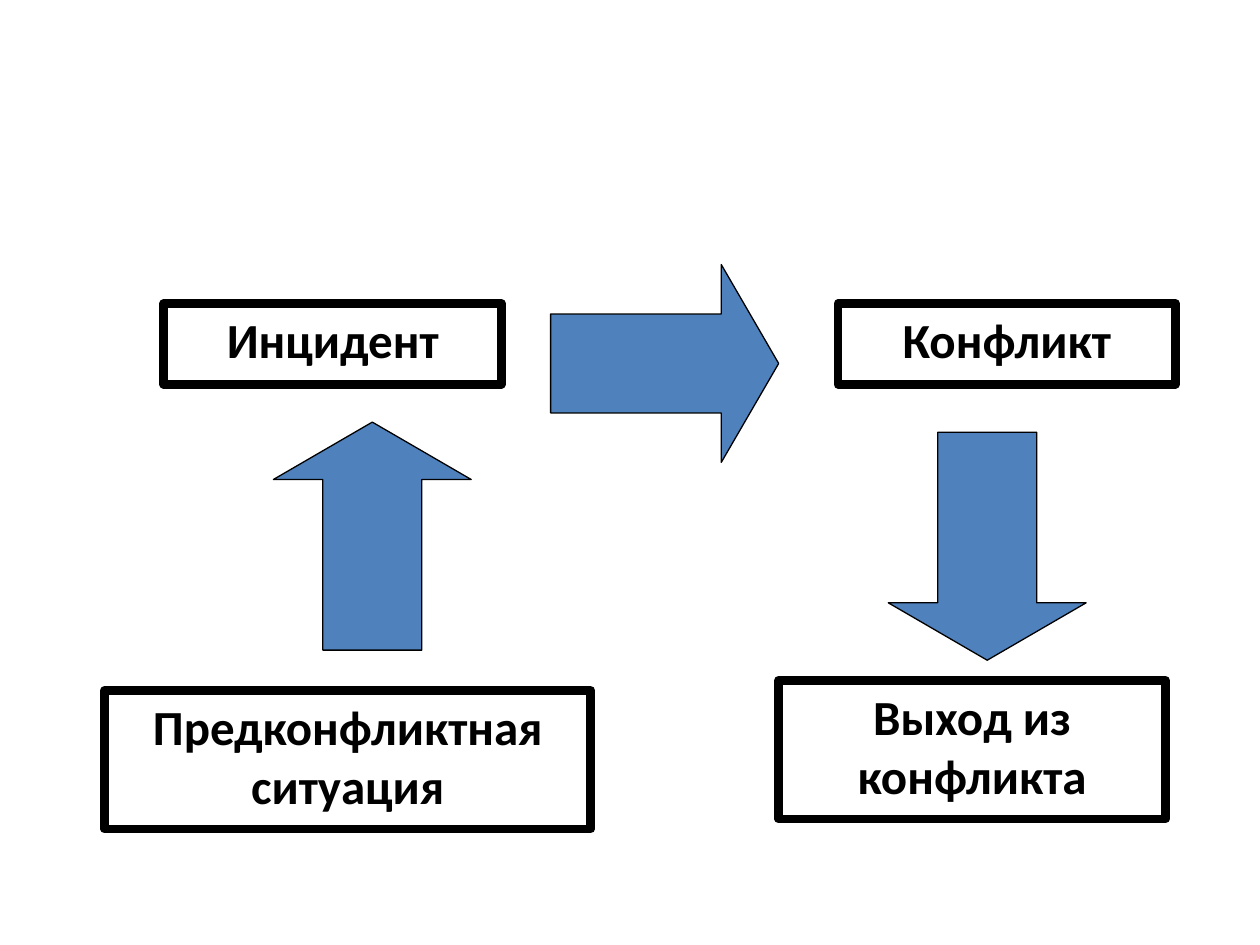
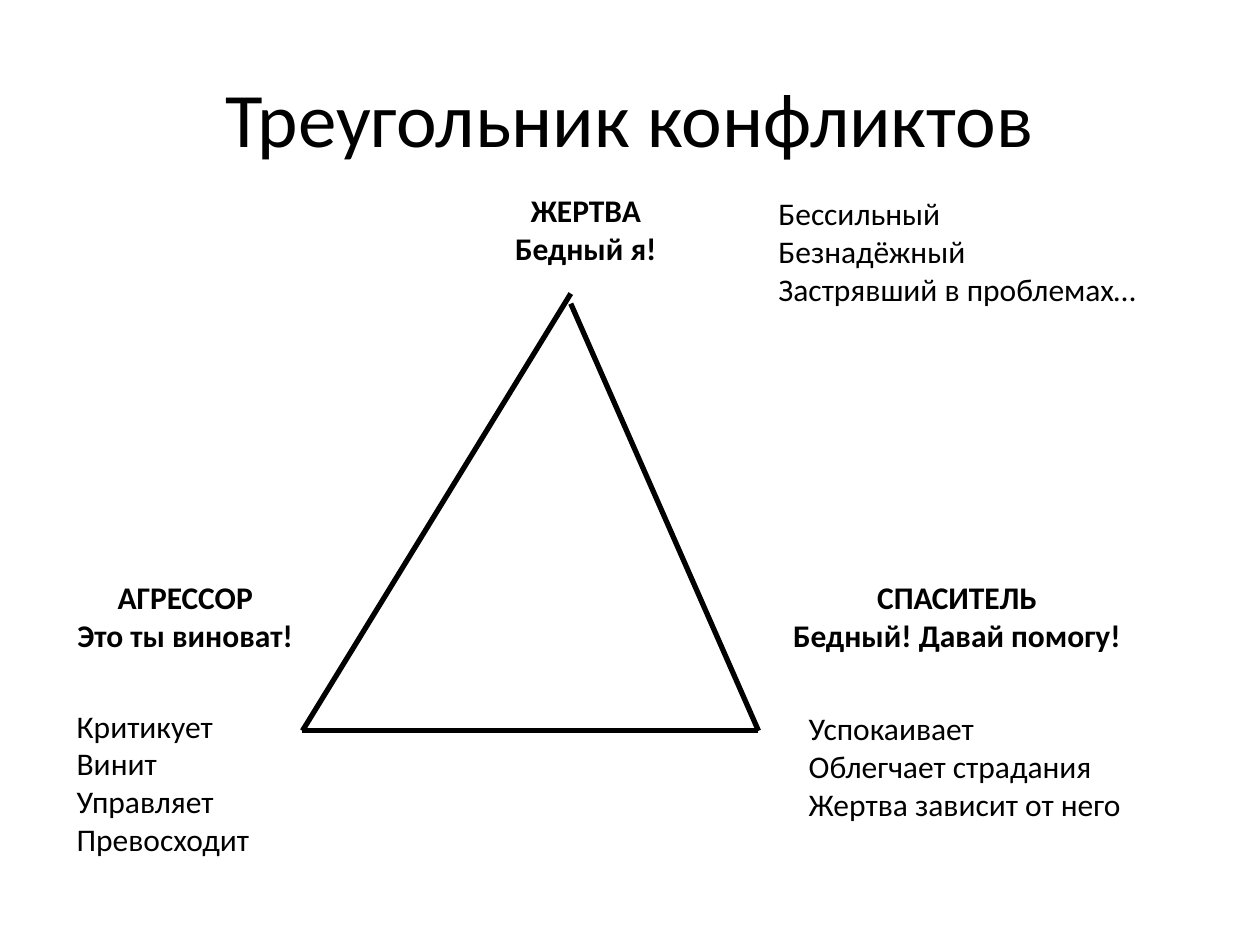
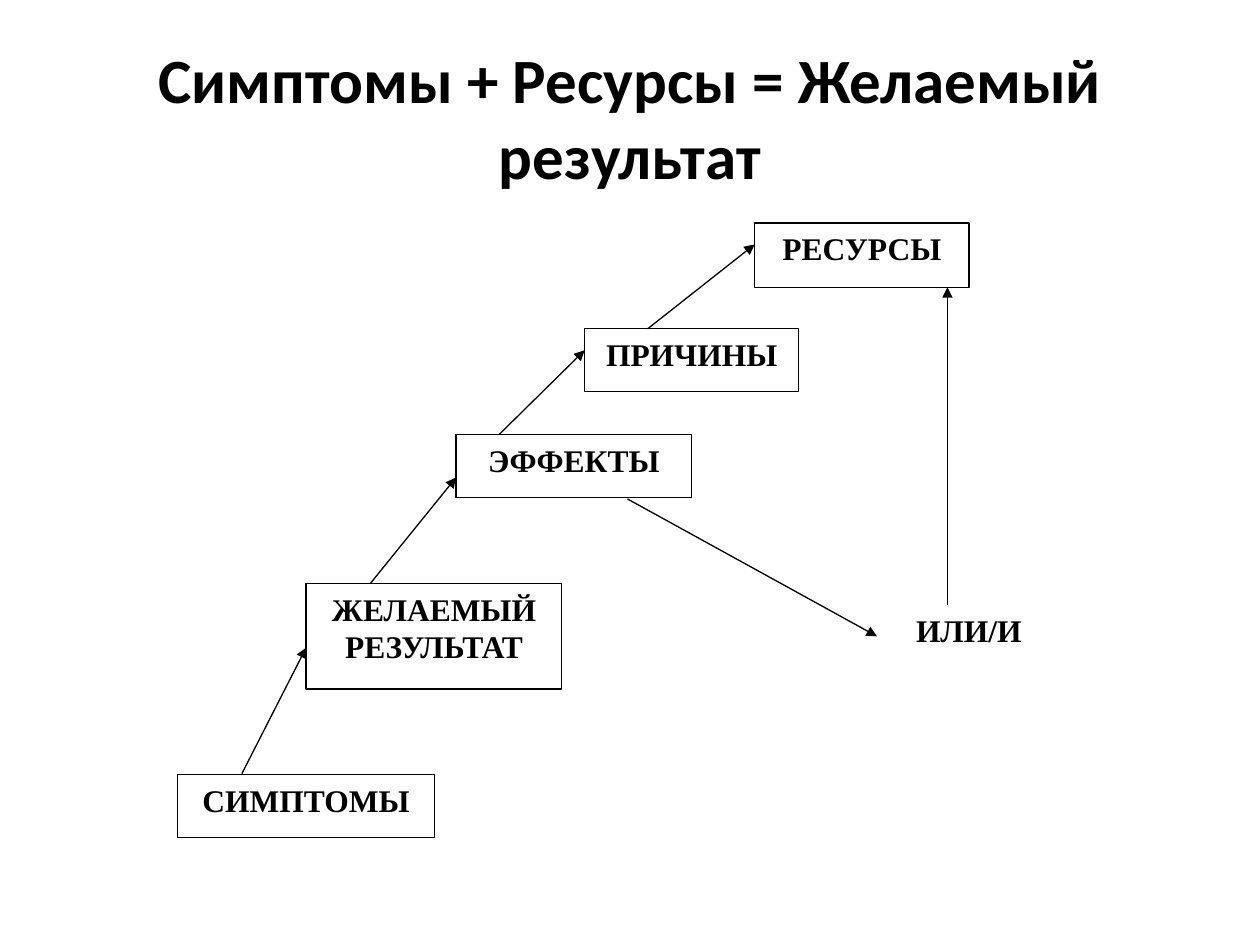
import pptx
import pptx.util
import pptx.dml.color
import pptx.enum.shapes
import pptx.enum.text
import pptx.oxml.ns
from lxml import etree

Inches = pptx.util.Inches
Pt = pptx.util.Pt
SHAPE = pptx.enum.shapes.MSO_SHAPE
ALIGN = pptx.enum.text.PP_ALIGN

BLACK = "000000"
WHITE = "FFFFFF"
BLUE = "4F81BD"
SANS = "Calibri"
SERIF = "Times New Roman"
TITLE_ONLY, BLANK = 5, 6


def rgb(value):
    return pptx.dml.color.RGBColor.from_string(value)


def inches(values):
    return [Inches(v) for v in values]


def style_text(tf, text, size, font=SANS, bold=False, align=ALIGN.CENTER):
    tf.text = text
    for p in tf.paragraphs:
        p.alignment = align
        p.font.size = Pt(size)
        p.font.name = font
        p.font.bold = bold
        p.font.color.rgb = rgb(BLACK)


def add_slide(prs, title=None, size=44, bold=False):
    slide = prs.slides.add_slide(prs.slide_layouts[BLANK if title is None else TITLE_ONLY])
    if title is not None:
        sp = slide.shapes.title
        sp.left, sp.top, sp.width, sp.height = inches((0.5, 0.3, 9, 1.25))
        style_text(sp.text_frame, title, size, bold=bold)
        sp.text_frame.vertical_anchor = pptx.enum.text.MSO_ANCHOR.MIDDLE
    return slide


def add_outlined(slide, kind, box, fill, line_width):
    """Add a preset shape; a fill or line width of None leaves that part out."""
    sp = slide.shapes.add_shape(kind, *inches(box))
    sp.shadow.inherit = False
    if fill is None:
        sp.fill.background()
    else:
        sp.fill.solid()
        sp.fill.fore_color.rgb = rgb(fill)
    if line_width is None:
        sp.line.fill.background()
    else:
        sp.line.color.rgb = rgb(BLACK)
        sp.line.width = Pt(line_width)
    return sp


def add_box(slide, text, box, size, font, fill, line_width):
    sp = add_outlined(slide, SHAPE.RECTANGLE, box, fill, line_width)
    tf = sp.text_frame
    tf.word_wrap = True
    tf.vertical_anchor = pptx.enum.text.MSO_ANCHOR.TOP
    style_text(tf, text, size, font, bold=True)


def add_block_arrow(slide, left, top, rotation):
    sp = add_outlined(slide, SHAPE.RIGHT_ARROW, (left, top, 1.81, 1.57), BLUE, 0.75)
    sp.adjustments[0] = 0.5
    sp.adjustments[1] = 0.29
    sp.rotation = rotation


def add_label(slide, text, box, bold, align):
    tf = slide.shapes.add_textbox(*inches(box)).text_frame
    tf.word_wrap = False
    tf.auto_size = pptx.enum.text.MSO_AUTO_SIZE.SHAPE_TO_FIT_TEXT
    style_text(tf, text, 18, bold=bold, align=align)


def add_line(slide, start, end, width, arrow=False):
    cxn = slide.shapes.add_connector(
        pptx.enum.shapes.MSO_CONNECTOR.STRAIGHT, *inches(start + end))
    cxn.line.color.rgb = rgb(BLACK)
    cxn.line.width = Pt(width)
    qn = pptx.oxml.ns.qn
    if arrow:
        etree.SubElement(cxn.line._get_or_add_ln(), qn("a:tailEnd"), type="triangle")
    etree.SubElement(cxn._element.spPr, qn("a:effectLst"))


def build_conflict_stages(prs):
    slide = add_slide(prs)
    stages = [
        ("Предконфликтная ситуация", (0.83, 5.48, 3.86, 1.1)),
        ("Инцидент", (1.3, 2.41, 2.68, 0.64)),
        ("Конфликт", (6.65, 2.41, 2.68, 0.64)),
        ("Выход из конфликта", (6.18, 5.4, 3.07, 1.1)),
    ]
    for text, box in stages:
        add_box(slide, text, box, 28, SANS, None, 5)
    for left, top, rotation in [(2.05, 3.47, 270), (6.93, 3.55, 90), (4.37, 2.1, 0)]:
        add_block_arrow(slide, left, top, rotation)


def build_conflict_triangle(prs):
    slide = add_slide(prs, "Треугольник конфликтов")
    aggressor, rescuer = (2.4, 5.8), (6.02, 5.8)
    sides = [((4.53, 2.33), aggressor), (rescuer, aggressor), ((4.53, 2.41), rescuer)]
    for start, end in sides:
        add_line(slide, start, end, 3)

    roles = [
        ("ЖЕРТВА\nБедный я!", (3.9, 1.47, 1.5, 0.7)),
        ("СПАСИТЕЛЬ\nБедный! Давай помогу!", (6.02, 4.54, 3.15, 0.7)),
        ("АГРЕССОР\nЭто ты виноват!", (0.35, 4.54, 2.24, 0.7)),
    ]
    for text, box in roles:
        add_label(slide, text, box, True, ALIGN.CENTER)
    traits = [
        ("Бессильный\nБезнадёжный\nЗастрявший в проблемах…", (6.08, 1.49, 3.42, 1)),
        ("Критикует\nВинит\nУправляет\nПревосходит", (0.51, 5.56, 1.72, 1.3)),
        ("Успокаивает\nОблегчает страдания\nЖертва зависит от него", (6.32, 5.58, 2.97, 1)),
    ]
    for text, box in traits:
        add_label(slide, text, box, False, ALIGN.LEFT)


def build_result_steps(prs):
    slide = add_slide(prs, "Симптомы + Ресурсы = Желаемый результат", 36, True)
    steps = [
        ("СИМПТОМЫ", (1.41, 6.15, 2.04, 0.5), 0.75),
        ("ЖЕЛАЕМЫЙ РЕЗУЛЬТАТ", (2.43, 4.63, 2.03, 0.84), 0.75),
        ("ЭФФЕКТЫ", (3.62, 3.45, 1.87, 0.5), 0.75),
        ("ПРИЧИНЫ", (4.64, 2.61, 1.7, 0.5), 0.75),
        ("РЕСУРСЫ", (5.99, 1.77, 1.7, 0.51), 0.75),
        ("ИЛИ/И", (7.01, 4.8, 1.36, 0.5), None),
    ]
    for text, box, line_width in steps:
        add_box(slide, text, box, 18, SERIF, WHITE, line_width)
    links = [
        ((1.92, 6.14), (2.43, 5.14)),
        ((2.94, 4.63), (3.62, 3.79)),
        ((3.96, 3.45), (4.64, 2.78)),
        ((5.14, 2.61), (5.99, 1.94)),
        ((4.98, 3.96), (6.96, 5.05)),
        ((7.52, 4.8), (7.52, 2.28)),
    ]
    for start, end in links:
        add_line(slide, start, end, 0.75, arrow=True)


def main():
    prs = pptx.Presentation()
    prs.slide_width, prs.slide_height = Inches(10), Inches(7.5)
    build_conflict_stages(prs)
    build_conflict_triangle(prs)
    build_result_steps(prs)
    prs.save("out.pptx")


if __name__ == "__main__":
    main()
